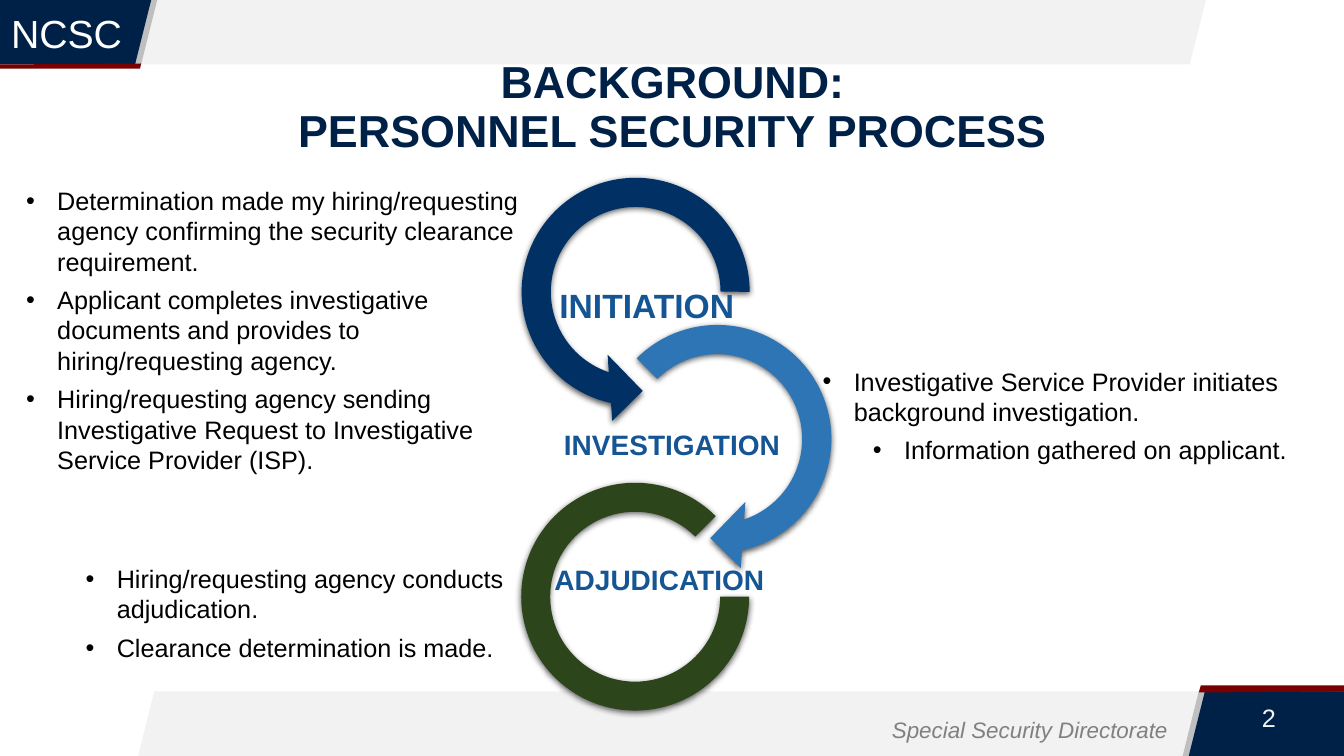
from lxml.etree import SubElement
from pptx import Presentation
from pptx.dml.color import RGBColor
from pptx.enum.shapes import MSO_SHAPE as SHAPE
from pptx.enum.text import MSO_ANCHOR as ANCHOR, MSO_AUTO_SIZE as AUTO_SIZE, PP_ALIGN as ALIGN
from pptx.oxml.ns import qn
from pptx.util import Inches, Pt

NAVY, RED, PALE, SILVER = "002147", "790000", "F2F2F2", "BFBFBF"
LABEL_BLUE = "155594"


def paint(shape, color):
    """Give a shape a plain fill with no outline or theme shadow."""
    shape.fill.solid()
    shape.fill.fore_color.rgb = RGBColor.from_string(color)
    shape.line.fill.background()
    shape.shadow.inherit = False


def write(box, lines, size, color, align=ALIGN.LEFT, inset=None, **styles):
    """Fill a box with one paragraph per line; styles are font attributes."""
    frame = box.text_frame
    frame.word_wrap = True
    frame.auto_size = AUTO_SIZE.NONE
    if inset is not None:
        frame.margin_left = frame.margin_right = Inches(inset)
        frame.margin_top = frame.margin_bottom = Inches(inset)
    frame.text = "\n".join(lines)
    for para in frame.paragraphs:
        para.alignment = align
        for span in para.runs:
            span.font.name = "Arial"
            span.font.size = Pt(size)
            span.font.color.rgb = RGBColor.from_string(color)
            for name, value in styles.items():
                setattr(span.font, name, value)
    return frame


deck = Presentation()
deck.slide_width, deck.slide_height = Inches(13.33), Inches(7.5)
page = deck.slides.add_slide(deck.slide_layouts[5])
shapes = page.shapes

# Header and footer bands
BAND_HEIGHT, FOOTER_TOP = 0.64, 6.86
bands = [
    (SHAPE.PARALLELOGRAM, 1.34, 0, 10.62, PALE),
    (SHAPE.PARALLELOGRAM, 0.8, 0, 0.76, SILVER),
    (SHAPE.PARALLELOGRAM, 0.74, 0, 0.76, NAVY),
    (SHAPE.RECTANGLE, 0, 0, 1.34, NAVY),
    (SHAPE.PARALLELOGRAM, 1.37, FOOTER_TOP, 10.59, PALE),
    (SHAPE.PARALLELOGRAM, 11.73, FOOTER_TOP, 0.76, SILVER),
    (SHAPE.PARALLELOGRAM, 11.79, FOOTER_TOP, 1.54, NAVY),
    (SHAPE.RECTANGLE, 12, FOOTER_TOP, 1.33, NAVY),
]
for kind, left, top, width, color in bands:
    band = shapes.add_shape(kind, Inches(left), Inches(top), Inches(width), Inches(BAND_HEIGHT))
    paint(band, color)

red_edges = [
    [(0, 0.64), (1.4, 0.63), (1.39, 0.68), (0, 0.68)],
    [(13.33, 6.86), (11.89, 6.87), (11.91, 6.8), (13.33, 6.8)],
]
for corners in red_edges:
    points = [(Inches(x), Inches(y)) for x, y in corners]
    builder = shapes.build_freeform(*points[0])
    builder.add_line_segments(points[1:])
    paint(builder.convert_to_shape(), RED)

footer = shapes.add_textbox(Inches(7.66), Inches(7.06), Inches(4.02), Inches(0.37))
write(footer, ["Special Security Directorate"], 16, "808080", ALIGN.RIGHT, italic=True)
agency = shapes.add_textbox(Inches(0.11), Inches(0.09), Inches(1.26), Inches(0.47))
write(agency, ["NCSC"], 28, "FFFFFF", inset=0)
number = shapes.add_textbox(Inches(11.94), Inches(6.92), Inches(1.29), Inches(0.4))
write(number, ["2"], 18, PALE, ALIGN.CENTER)

# Title
title = shapes.title
title.left, title.top = Inches(0.92), Inches(0.84)
title.width, title.height = Inches(11.5), Inches(0.47)
frame = write(title, ["BACKGROUND:\vPERSONNEL SECURITY PROCESS"], 32, NAVY,
              ALIGN.CENTER, 0.05, bold=True)
frame.vertical_anchor = ANCHOR.MIDDLE
frame.paragraphs[0].line_spacing = 0.9

# Process rings, each followed by its label
stages = [
    (SHAPE.CIRCULAR_ARROW, (4.99, 1.58, 2.63), (0.11, 11.423, 45, 108, 0.125), "003064",
     "INITIATION", (5.49, 2.69, 1.85), 24),
    (SHAPE.LEFT_CIRCULAR_ARROW, (5.8, 3.04, 2.63), (0.11, 11.423, 63, 189, 0.125), "2E75B6",
     "INVESTIGATION", (5.5, 4.06, 2.33), 20),
    (SHAPE.BLOCK_ARC, (5.17, 4.79, 2.26), (135, 108, 0.127), "2C451B",
     "ADJUDICATION", (5.25, 5.4, 2.58), 20),
]
for kind, (left, top, side), adjustments, color, name, place, size in stages:
    ring = shapes.add_shape(kind, Inches(left), Inches(top), Inches(side), Inches(side))
    for index, value in enumerate(adjustments):
        ring.adjustments[index] = value
    paint(ring, color)
    properties = ring._element.spPr
    properties.find(qn("a:xfrm")).set("flipH", "1")
    shadow = SubElement(properties.find(qn("a:effectLst")), qn("a:outerShdw"),
                        blurRad=str(Pt(4.5)), dist=str(Pt(1.5)), dir="5400000",
                        algn="ctr", rotWithShape="0")
    shade = SubElement(shadow, qn("a:srgbClr"), val="000000")
    SubElement(shade, qn("a:alpha"), val="63000")

    left, top, width = place
    label = shapes.add_textbox(Inches(left), Inches(top), Inches(width), Inches(0.73))
    frame = write(label, [name], size, LABEL_BLUE, ALIGN.CENTER, 0.01, bold=True)
    frame.vertical_anchor = ANCHOR.MIDDLE
    frame.paragraphs[0].line_spacing = 0.9

# Bulleted notes: place, then (level, text) pairs
notes = [
    ((0.16, 1.79, 5.34, 3), [
        (0, "Determination made my hiring/requesting agency confirming the security "
            "clearance requirement."),
        (0, "Applicant completes investigative documents and provides to "
            "hiring/requesting agency."),
        (0, "Hiring/requesting agency sending Investigative Request to Investigative "
            "Service Provider (ISP)."),
    ]),
    ((8.06, 3.58, 4.9, 1.09), [
        (0, "Investigative Service Provider initiates background investigation."),
        (1, "Information gathered on applicant."),
    ]),
    ((0.75, 5.54, 4.65, 1.09), [
        (0, "Hiring/requesting agency conducts adjudication."),
        (0, "Clearance determination is made."),
    ]),
]
for place, items in notes:
    box = shapes.add_textbox(*[Inches(value) for value in place])
    frame = write(box, [text for level, text in items], 18, "000000")
    for para, (level, text) in zip(frame.paragraphs, items):
        para.level = level
        para.space_before = Pt(6)
        settings = para._p.get_or_add_pPr()
        settings.set("marL", str(Inches(0.31 + 0.5 * level)))
        settings.set("indent", str(Inches(-0.31)))
        SubElement(settings, qn("a:buFont"), typeface="Arial")
        SubElement(settings, qn("a:buChar"), char="•")

deck.save("out.pptx")
